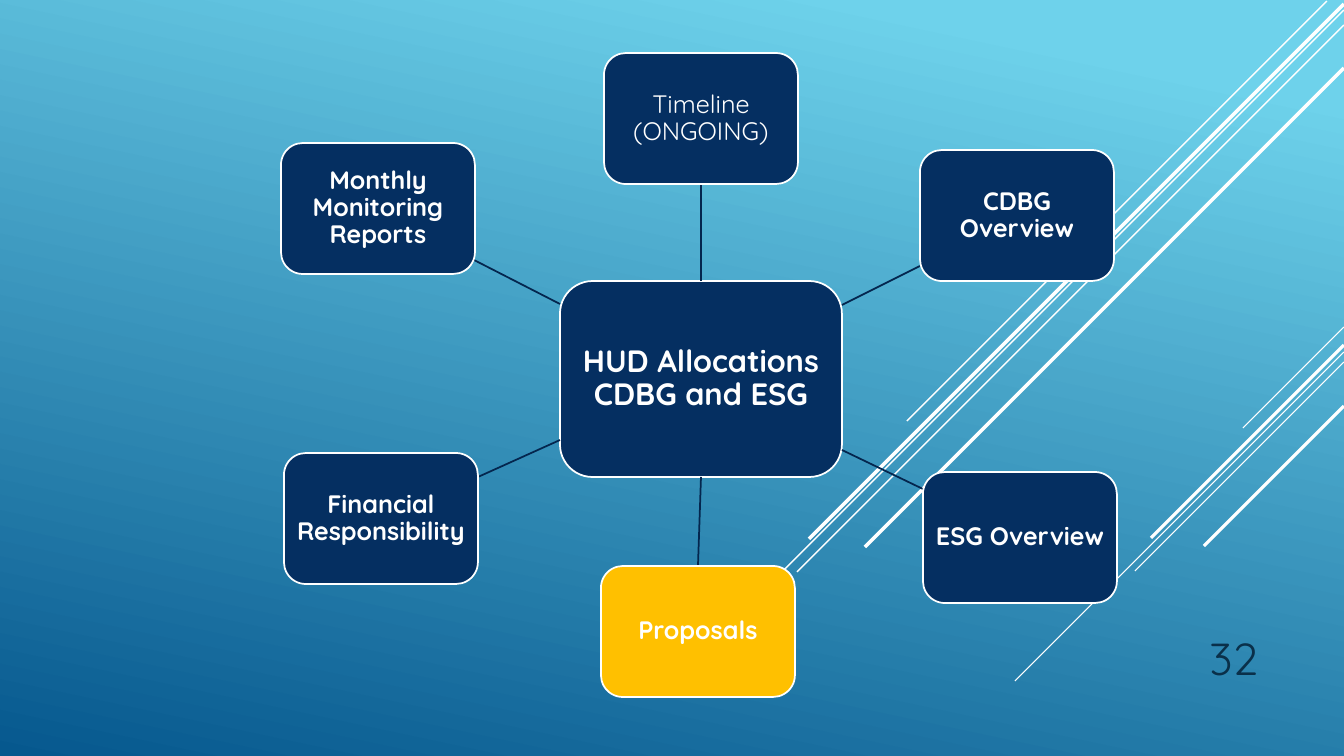
from lxml.etree import SubElement
from pptx import Presentation
from pptx.dml.color import RGBColor as Rgb
from pptx.enum.shapes import MSO_CONNECTOR as Conn, MSO_SHAPE as Kind
from pptx.enum.text import MSO_ANCHOR as Anchor, PP_ALIGN as Align
from pptx.oxml.ns import qn
from pptx.util import Emu, Pt


class Theme:
    font = "Quicksand"
    sky, deep = Rgb.from_string("6ED2EB"), Rgb.from_string("06588E")
    navy, gold = Rgb.from_string("052F61"), Rgb.from_string("FFC000")
    link, ink = Rgb.from_string("04264E"), Rgb.from_string("0A304A")
    white = Rgb.from_string("FFFFFF")
    hub, node, page = Pt(22), Pt(18), Pt(32)
    edge = 1.25


WIDE, HIGH = 1344, 756
NODE = (194, 131)
HUB = (560, 281, 282, 196)

# Stripes: right end x and y, run down to the left at 45 degrees, weight
STRIPES = [
    (1344, 327, 101, 0.75), (1344, 352, 329, 0.75), (1344, 362, 209, 0.75),
    (1344, 345, 193, 2.25), (1344, 406, 140, 2.25),
    (1327, 1, 420, 1), (1344, 10, 671, 1), (1344, 25, 547, 1),
    (1344, 4, 535, 2.5), (1344, 68, 479, 2.5),
]

# Nodes: text, left and top, fill, bold, link ends, joined sides of hub and node
NODES = [
    ("Timeline (ONGOING)", (604, 53), Theme.navy, False,
     (701, 281, 701, 184), (0, 2)),
    ("ESG Overview", (923, 472), Theme.navy, True, (842, 450, 923, 489), None),
    ("Proposals", (601, 566), Theme.gold, True, (701, 477, 698, 566), (2, 0)),
    ("Monthly Monitoring Reports", (281, 143), Theme.navy, True,
     (560, 304, 474, 260), None),
    ("Financial Responsibility", (284, 453), Theme.navy, True,
     (560, 440, 478, 477), None),
    ("CDBG Overview", (920, 150), Theme.navy, True, (842, 305, 920, 266), None),
]


def px(num):
    return Emu(round(num * 914400 / 100.8))


def put(item, vals):
    for name, val in vals.items():
        setattr(item, name, val)


def line(slide, ends, tint, size):
    bar = slide.shapes.add_connector(Conn.STRAIGHT, *map(px, ends))
    put(bar.line, {"width": Pt(size)})
    bar.line.color.rgb = tint
    SubElement(bar._element.spPr, qn("a:effectLst"))
    return bar


def write(frame, text, look, align, space=1.0):
    para = frame.paragraphs[0]
    put(para, {"alignment": align, "line_spacing": space})
    run = para.add_run()
    run.text = text
    tint = look.pop("tint")
    put(run.font, {"name": Theme.font, **look})
    run.font.color.rgb = tint


def card(slide, box, text, fill, size, bold, pad):
    shape = slide.shapes.add_shape(Kind.ROUNDED_RECTANGLE, *map(px, box))
    shape.shadow.inherit = False
    shape.fill.solid()
    shape.fill.fore_color.rgb = fill
    shape.line.color.rgb = Theme.white
    shape.line.width = Pt(Theme.edge)
    sides = ("left", "top", "right", "bottom")
    put(shape.text_frame, {
        "word_wrap": True, "vertical_anchor": Anchor.MIDDLE,
        **{f"margin_{side}": px(pad) for side in sides}})
    look = {"size": size, "bold": bold, "tint": Theme.white}
    write(shape.text_frame, text, look, Align.CENTER, 0.9)
    return shape


def back(slide):
    fill = slide.background.fill
    fill.gradient()
    fill.gradient_angle = 258
    stops = ((0.1, Theme.sky), (1, Theme.deep))
    for stop, (place, tint) in zip(fill.gradient_stops, stops):
        stop.position = place
        stop.color.rgb = tint
    for x, y, run, size in STRIPES:
        line(slide, (x, y, x - run, y + run), Theme.white, size)


def number(slide, box, text):
    frame = slide.shapes.add_textbox(*map(px, box)).text_frame
    put(frame, {"word_wrap": True, "vertical_anchor": Anchor.BOTTOM})
    look = {"size": Theme.page, "tint": Theme.ink}
    write(frame, text, look, Align.RIGHT)


def web(slide, box):
    hub = card(slide, box, "HUD Allocations CDBG and ESG",
               Theme.navy, Theme.hub, True, 6)
    for text, spot, fill, bold, ends, sides in NODES:
        link = line(slide, ends, Theme.link, Theme.edge)
        node = card(slide, spot + NODE, text, fill, Theme.node, bold, 5)
        if sides:
            link.begin_connect(hub, sides[0])
            link.end_connect(node, sides[1])


def main():
    deck = Presentation()
    put(deck, {"slide_width": px(WIDE), "slide_height": px(HIGH)})
    slide = deck.slides.add_slide(deck.slide_layouts[6])
    back(slide)
    number(slide, (1142, 615, 126, 74), "32")
    web(slide, HUB)
    deck.save("out.pptx")


if __name__ == "__main__":
    main()
